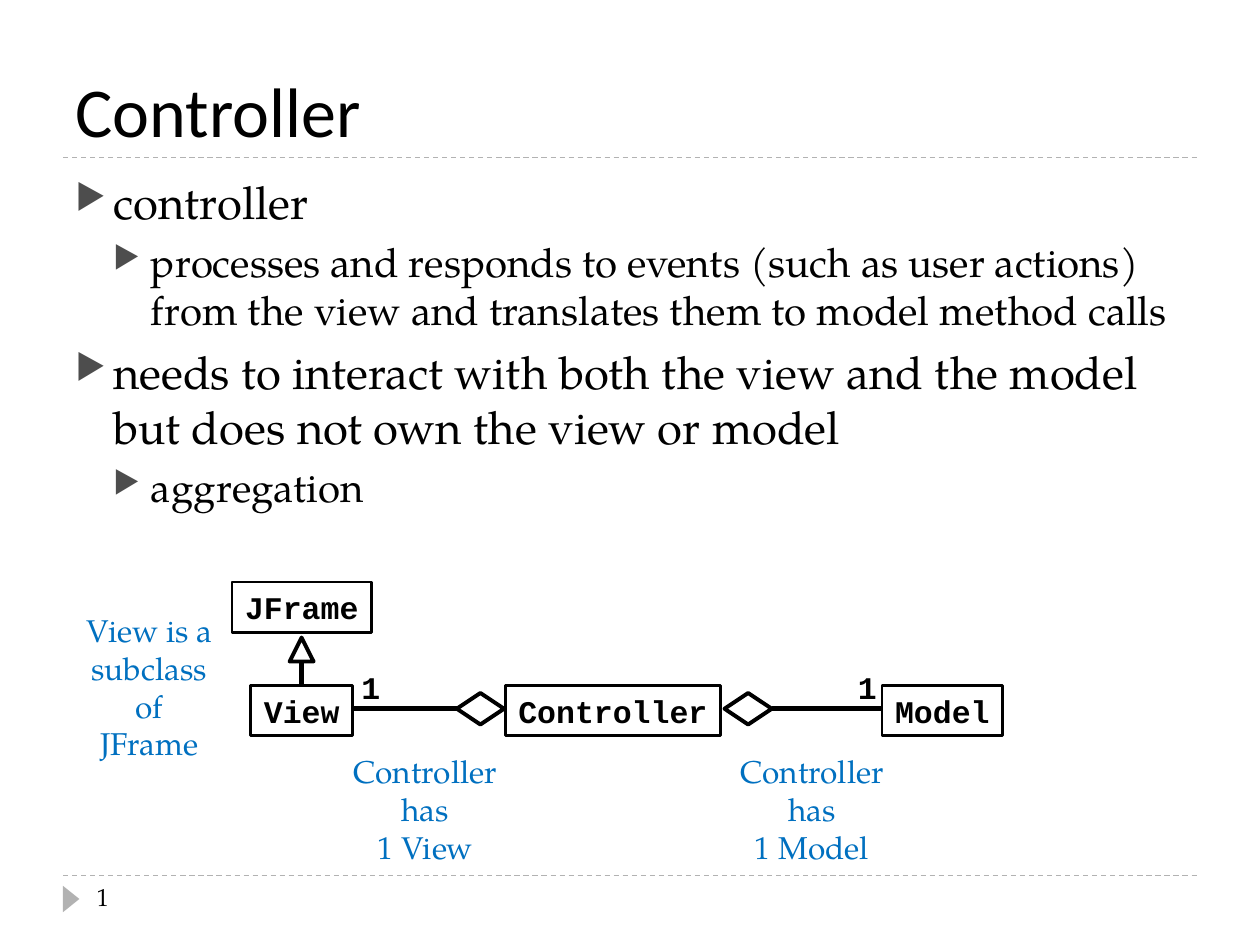
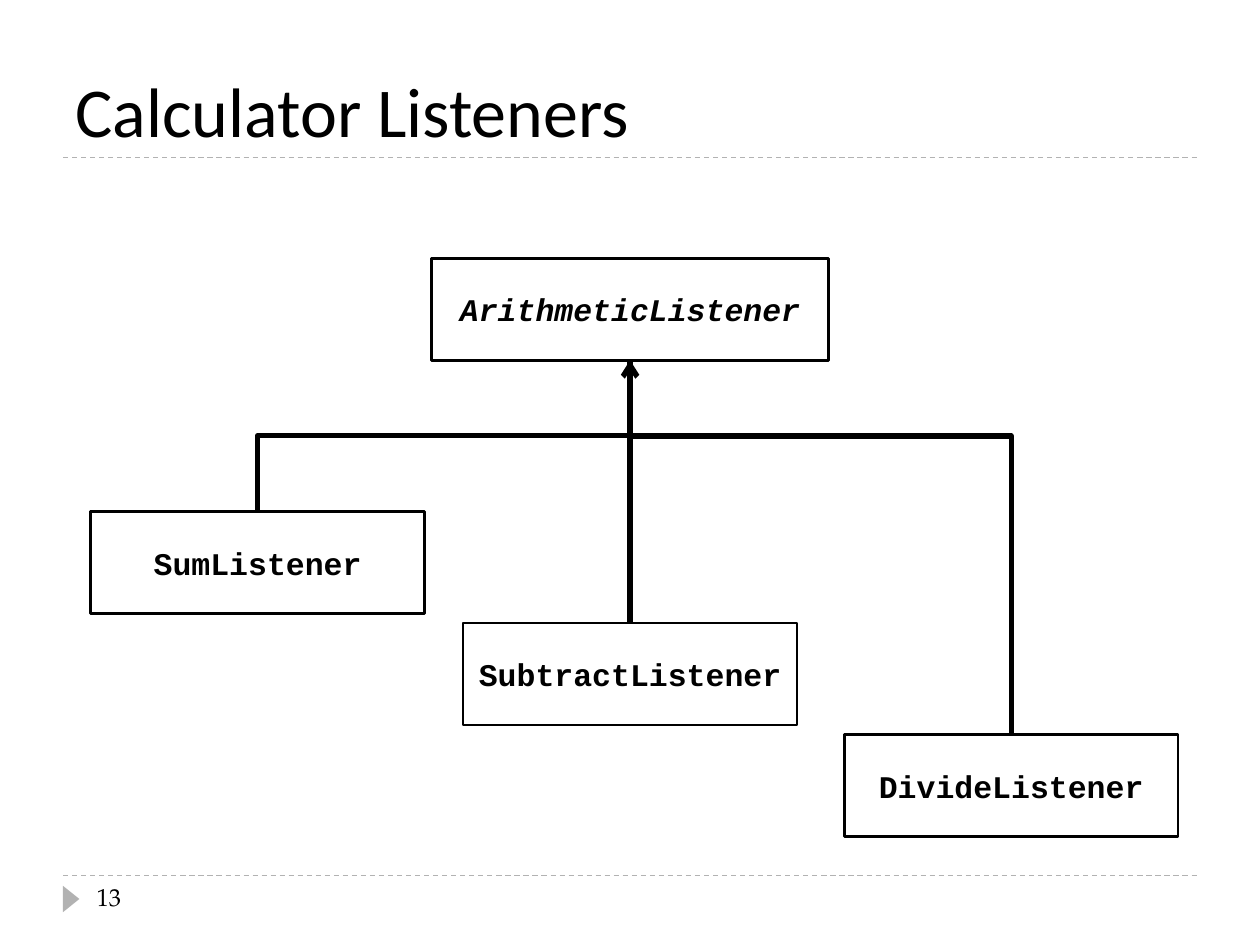
"""Build two slides on a calculator's controller and its listener classes."""
import lxml.etree
import pptx
import pptx.dml.color
import pptx.enum.dml
import pptx.enum.shapes
import pptx.enum.text
import pptx.oxml.ns
import pptx.util

Pt = pptx.util.Pt
qn = pptx.oxml.ns.qn
SHAPES = pptx.enum.shapes.MSO_SHAPE
CONNECTORS = pptx.enum.shapes.MSO_CONNECTOR
ALIGN = pptx.enum.text.PP_ALIGN
ANCHOR = pptx.enum.text.MSO_ANCHOR

COLORS = {"ink": "000000", "paper": "FFFFFF", "rule": "B2B2B2",
          "bullet": "4D4D4D", "note": "0070C0"}
TITLE_FONT, BODY_FONT, CODE_FONT = "Calibri", "TeX Gyre Pagella", "Courier New"
LEFT, RIGHT, TITLE_RULE, FOOTER_RULE = 36, 684, 90, 500.4
LEVELS = [{"size": 26, "before": 6}, {"size": 23, "before": 5}]
INDENT = 21.6
CLASS_TOP, CLASS_HEIGHT = 391.7, 28.8
LISTENER_WIDTH, LISTENER_HEIGHT = 190.8, 58.3


def rgb(color):
    """Return the named colour."""
    return pptx.dml.color.RGBColor.from_string(COLORS[color])


def add_xml(parent, tag, **attributes):
    """Append a drawing element with the given attributes."""
    element = lxml.etree.SubElement(parent, qn(tag))
    for name, value in attributes.items():
        element.set(name, str(value))
    return element


def write(holder, text, size, font, color="ink", align=ALIGN.LEFT,
          anchor=ANCHOR.TOP, wrap=True, bold=False, italic=False):
    """Set the text of a shape and format it."""
    frame = holder.text_frame
    frame.text = text
    frame.word_wrap = wrap
    frame.auto_size = pptx.enum.text.MSO_AUTO_SIZE.NONE
    frame.vertical_anchor = anchor
    for paragraph in frame.paragraphs:
        paragraph.alignment = align
        for run in paragraph.runs:
            run.font.size = Pt(size)
            run.font.name = font
            run.font.color.rgb = rgb(color)
            run.font.bold = bold
            run.font.italic = italic


def add_label(slide, text, left, top, width, height, size, font, **style):
    """Add a text box."""
    label = slide.shapes.add_textbox(Pt(left), Pt(top), Pt(width), Pt(height))
    write(label, text, size, font, **style)


def add_figure(slide, kind, left, top, width, height,
               fill=None, line="ink", weight=2.25):
    """Add a preset shape, outlined or filled."""
    figure = slide.shapes.add_shape(kind, Pt(left), Pt(top), Pt(width), Pt(height))
    figure.shadow.inherit = False
    if fill:
        figure.fill.solid()
        figure.fill.fore_color.rgb = rgb(fill)
    else:
        figure.fill.background()
    if line:
        figure.line.color.rgb = rgb(line)
        figure.line.width = Pt(weight)
    else:
        figure.line.fill.background()
    return figure


def add_class(slide, name, left, top, width, height, italic=False):
    """Add a class box with its name in the code font."""
    box = add_figure(slide, SHAPES.RECTANGLE, left, top, width, height, weight=1.5)
    write(box, name, 18, CODE_FONT, align=ALIGN.CENTER, anchor=ANCHOR.MIDDLE,
          wrap=False, bold=True, italic=italic)


def add_line(slide, start, end, color="ink", weight=3, kind=CONNECTORS.STRAIGHT):
    """Add a connector without a shadow."""
    line = slide.shapes.add_connector(kind, *(Pt(value) for value in (*start, *end)))
    line.line.color.rgb = rgb(color)
    line.line.width = Pt(weight)
    add_xml(line._element.spPr, "a:effectLst")
    return line


def add_branch(slide, start, end, drop):
    """Add an elbow that leaves start downwards and turns after the drop."""
    (x1, y1), (x2, y2) = start, end
    middle_x, middle_y = (x1 + x2) / 2, (y1 + y2) / 2
    half_run, half_fall = abs(x2 - x1) / 2, (y2 - y1) / 2
    branch = add_line(slide, (middle_x - half_fall, middle_y - half_run),
                      (middle_x + half_fall, middle_y + half_run),
                      kind=CONNECTORS.ELBOW)
    properties = branch._element.spPr
    transform = properties.find(qn("a:xfrm"))
    transform.set("rot", str((90 if x2 < x1 else 270) * 60000))
    if x2 > x1:
        transform.set("flipH", "1")
    geometry = properties.find(qn("a:prstGeom"))
    adjustments = geometry.find(qn("a:avLst"))
    if adjustments is None:
        adjustments = add_xml(geometry, "a:avLst")
    share = round(100000 * drop / (y2 - y1))
    add_xml(adjustments, "a:gd", name="adj1", fmla=f"val {share}")
    return branch


def add_bullets(slide, points):
    """Add the two-level bulleted text below the title."""
    body = slide.shapes.add_textbox(Pt(LEFT), Pt(95.8), Pt(RIGHT - LEFT), Pt(388.8))
    write(body, "\n".join(text for level, text in points), 26, BODY_FONT)
    for paragraph, (level, text) in zip(body.text_frame.paragraphs, points):
        paragraph.level = level
        paragraph.space_before = Pt(LEVELS[level]["before"])
        paragraph.runs[0].font.size = Pt(LEVELS[level]["size"])
        properties = paragraph._p.get_or_add_pPr()
        properties.set("marL", str(Pt(INDENT * (level + 1))))
        properties.set("indent", str(-Pt(INDENT)))
        bullet_color = add_xml(properties, "a:buClr")
        add_xml(bullet_color, "a:srgbClr", val=COLORS["bullet"])
        add_xml(properties, "a:buSzPct", val=76000)
        add_xml(properties, "a:buChar", char="▶")


def add_slide(deck, title, number):
    """Add a slide with the shared title, rules and page number."""
    slide = deck.slides.add_slide(deck.slide_layouts[5])
    for y in (FOOTER_RULE, TITLE_RULE):
        rule = add_line(slide, (LEFT, y), (RIGHT, y), "rule", 0.75)
        rule.line.dash_style = pptx.enum.dml.MSO_LINE.DASH
    marker = add_figure(slide, SHAPES.ISOSCELES_TRIANGLE, 33.1, 509, 15.1, 9.4,
                        fill="rule", line=None)
    marker.rotation = 90
    heading = slide.shapes.title
    heading.left, heading.top = Pt(LEFT), Pt(12.2)
    heading.width, heading.height = Pt(RIGHT - LEFT), Pt(77.8)
    write(heading, title, 40, TITLE_FONT, anchor=ANCHOR.BOTTOM)
    add_label(slide, number, 48.2, FOOTER_RULE, 156, 28.8, 14, BODY_FONT)
    return slide


def add_aggregation(slide, diamond_left, line_start, line_end, count_left):
    """Add an aggregation diamond, its line and the count at the far end."""
    add_figure(slide, SHAPES.DIAMOND, diamond_left, 396, 27, 18, fill="paper")
    add_line(slide, (line_start, 405), (line_end, 405))
    add_label(slide, "1", count_left, 378, 25.2, CLASS_HEIGHT, 18, CODE_FONT,
              wrap=False, bold=True)


def build_controller(deck):
    """Build the slide on the controller and its class diagram."""
    slide = add_slide(deck, "Controller", "1")
    add_bullets(slide, [
        (0, "controller"),
        (1, "processes and responds to events (such as user actions) "
            "from the view and translates them to model method calls"),
        (0, "needs to interact with both the view and the model "
            "but does not own the view or model"),
        (1, "aggregation"),
    ])
    for name, left, top in (("View", 143.3, CLASS_TOP), ("JFrame", 132.5, 332.6),
                            ("Controller", 288.7, CLASS_TOP),
                            ("Model", 504, CLASS_TOP)):
        add_class(slide, name, left, top, 10.8 * len(name) + 15, CLASS_HEIGHT)
    add_figure(slide, SHAPES.ISOSCELES_TRIANGLE, 165.5, 364.3, 13.7, 13.7)
    add_line(slide, (172.3, CLASS_TOP), (172.3, 378))
    add_aggregation(slide, 414, 441, 504, 483.1)
    add_aggregation(slide, 261, 261, 202.3, 199.4)
    for note, left, top, width, height in (
            ("View is a\vsubclass\vof JFrame", 40.3, 345.6, 90, 72.7),
            ("Controller has\v1 View", 180, 426.2, 126, 51.1),
            ("Controller has\v1 Model", 401, 426.2, 126, 51.1)):
        add_label(slide, note, left, top, width, height, 18, BODY_FONT,
                  color="note", align=ALIGN.CENTER)


def build_listeners(deck):
    """Build the slide with the listener class hierarchy."""
    slide = add_slide(deck, "Calculator Listeners", "13")
    parent_x, parent_top, parent_width = 360, 147.6, 226.8
    parent_bottom = parent_top + LISTENER_HEIGHT
    drop = 43.2
    add_class(slide, "ArithmeticListener", parent_x - parent_width / 2, parent_top,
              parent_width, LISTENER_HEIGHT, italic=True)
    listeners = (("SumListener", 147.2), ("SubtractListener", parent_x),
                 ("DivideListener", 577.8))
    for row, (name, x) in enumerate(listeners):
        top = 292.4 + 63.7 * row
        add_class(slide, name, x - LISTENER_WIDTH / 2, top,
                  LISTENER_WIDTH, LISTENER_HEIGHT)
        if x == parent_x:
            add_line(slide, (x, parent_bottom + drop - 1.5), (x, top))
            continue
        branch = add_branch(slide, (parent_x, parent_bottom), (x, top), drop)
        if x > parent_x:
            add_xml(branch.line._get_or_add_ln(), "a:headEnd", type="arrow")


def main():
    """Build and save the deck."""
    deck = pptx.Presentation()
    deck.slide_width, deck.slide_height = Pt(720), Pt(540)
    build_controller(deck)
    build_listeners(deck)
    deck.save("out.pptx")


if __name__ == "__main__":
    main()
